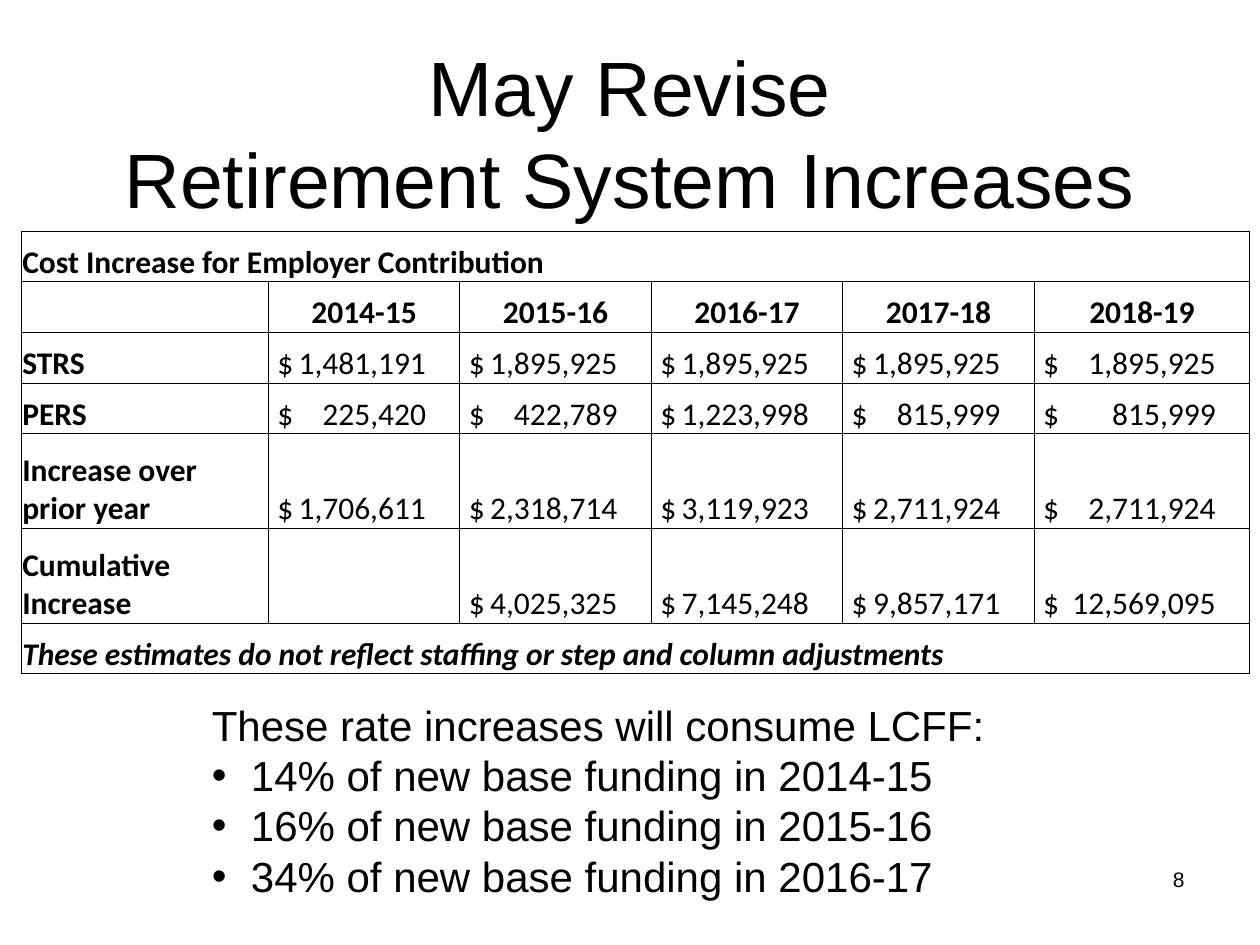
"""Build the slide on retirement system cost increases."""
from dataclasses import dataclass

from lxml.etree import SubElement
from pptx import Presentation
from pptx.dml.color import RGBColor
from pptx.enum.text import MSO_ANCHOR, PP_ALIGN
from pptx.oxml.ns import qn
from pptx.util import Cm, Pt


@dataclass(frozen=True)
class Theme:
    ink: str = "000000"
    body_font: str = "Arial"
    table_font: str = "Calibri"
    title_size: int = 44
    body_size: int = 24
    table_size: int = 18
    number_size: int = 12
    border: float = 0.5


THEME = Theme()

TITLE = ["May Revise", "Retirement System Increases"]
CAPTION = "Cost Increase for Employer Contribution"
YEARS = ["2014-15", "2015-16", "2016-17", "2017-18", "2018-19"]
COSTS = {
    "STRS": ["1,481,191", "1,895,925", "1,895,925", "1,895,925", "1,895,925"],
    "PERS": ["225,420", "422,789", "1,223,998", "815,999", "815,999"],
    "Increase over prior year": ["1,706,611", "2,318,714", "3,119,923", "2,711,924", "2,711,924"],
    "Cumulative Increase": ["", "4,025,325", "7,145,248", "9,857,171", "12,569,095"],
}
FOOTNOTE = "These estimates do not reflect staffing or step and column adjustments"
IMPACT_INTRO = "These rate increases will consume LCFF:"
IMPACTS = [
    "14% of new base funding in 2014-15",
    "16% of new base funding in 2015-16",
    "34% of new base funding in 2016-17",
]
PAGE_NUMBER = "8"

TITLE_BOX = (1.27, 0.43, 22.86, 4.45)
TABLE_CORNER = (0.43, 4.66)
COLUMN_WIDTHS = [4.98, 3.86, 3.86, 3.86, 3.86, 4.34]
ROW_HEIGHTS = [1.02, 1.02, 1.02, 1.02, 1.91, 1.91, 1.02]
IMPACT_BOX = (4.02, 13.97, 17.15, 4.37)
NUMBER_BOX = (18.21, 17.35, 5.92, 1.32)
CELL_INSET = 0.02
AMOUNT_INSET = 0.18
AMOUNT_RIGHT_GAP = 0.86
BULLET_INDENT = 0.79


def add_text(paragraph, text, size, font=THEME.body_font, bold=False, italic=False):
    run = paragraph.add_run()
    run.text = text
    run.font.name = font
    run.font.size = Pt(size)
    run.font.bold = bold
    run.font.italic = italic
    run.font.color.rgb = RGBColor.from_string(THEME.ink)


def add_box(slide, box):
    frame = slide.shapes.add_textbox(*map(Cm, box)).text_frame
    frame.word_wrap = True
    return frame


def add_bullet(paragraph):
    properties = paragraph._p.get_or_add_pPr()
    properties.set("marL", str(Cm(BULLET_INDENT)))
    properties.set("indent", str(-Cm(BULLET_INDENT)))
    SubElement(properties, qn("a:buFont"), typeface=THEME.body_font)
    SubElement(properties, qn("a:buChar"), char="•")


def format_cell(cell):
    properties = cell._tc.get_or_add_tcPr()
    for side in ("a:lnL", "a:lnR", "a:lnT", "a:lnB"):
        line = SubElement(properties, qn(side), w=str(Pt(THEME.border)))
        fill = SubElement(line, qn("a:solidFill"))
        SubElement(fill, qn("a:srgbClr"), val=THEME.ink)
    cell.fill.background()
    cell.vertical_anchor = MSO_ANCHOR.BOTTOM
    cell.margin_left = cell.margin_right = cell.margin_top = Cm(CELL_INSET)
    cell.margin_bottom = 0


def write_cell(cell, text, bold=True, italic=False):
    paragraph = cell.text_frame.paragraphs[0]
    add_text(paragraph, text, THEME.table_size, THEME.table_font, bold, italic)
    return paragraph


def write_amount(cell, amount, width):
    cell.margin_left = Cm(AMOUNT_INSET)
    paragraph = write_cell(cell, f"$\t{amount}", bold=False)
    tabs = SubElement(paragraph._p.get_or_add_pPr(), qn("a:tabLst"))
    SubElement(tabs, qn("a:tab"), pos=str(Cm(width - AMOUNT_RIGHT_GAP)), algn="r")


def add_title(slide):
    title = slide.shapes.title
    title.left, title.top, title.width, title.height = map(Cm, TITLE_BOX)
    title.text_frame.vertical_anchor = MSO_ANCHOR.MIDDLE
    paragraph = title.text_frame.paragraphs[0]
    paragraph.alignment = PP_ALIGN.CENTER
    for index, line in enumerate(TITLE):
        if index:
            paragraph.add_line_break()
        add_text(paragraph, line, THEME.title_size)


def add_cost_table(slide):
    size = (sum(COLUMN_WIDTHS), sum(ROW_HEIGHTS))
    table = slide.shapes.add_table(
        len(ROW_HEIGHTS), len(COLUMN_WIDTHS), *map(Cm, TABLE_CORNER + size)
    ).table
    table.first_row = table.horz_banding = False
    for column, width in zip(table.columns, COLUMN_WIDTHS):
        column.width = Cm(width)
    for row, height in zip(table.rows, ROW_HEIGHTS):
        row.height = Cm(height)
    for cell in table.iter_cells():
        format_cell(cell)

    last_row, last_column = len(ROW_HEIGHTS) - 1, len(COLUMN_WIDTHS) - 1
    for row, text, italic in ((0, CAPTION, False), (last_row, FOOTNOTE, True)):
        table.cell(row, 0).merge(table.cell(row, last_column))
        write_cell(table.cell(row, 0), text, italic=italic)
    for column, year in enumerate(YEARS, 1):
        write_cell(table.cell(1, column), year).alignment = PP_ALIGN.CENTER
    for row, (label, amounts) in enumerate(COSTS.items(), 2):
        write_cell(table.cell(row, 0), label)
        for column, amount in enumerate(amounts, 1):
            if amount:
                write_amount(table.cell(row, column), amount, COLUMN_WIDTHS[column])


def add_impacts(slide):
    frame = add_box(slide, IMPACT_BOX)
    add_text(frame.paragraphs[0], IMPACT_INTRO, THEME.body_size)
    for impact in IMPACTS:
        paragraph = frame.add_paragraph()
        add_bullet(paragraph)
        add_text(paragraph, impact, THEME.body_size)


def add_page_number(slide):
    paragraph = add_box(slide, NUMBER_BOX).paragraphs[0]
    paragraph.alignment = PP_ALIGN.RIGHT
    add_text(paragraph, PAGE_NUMBER, THEME.number_size)


def main():
    deck = Presentation()
    deck.slide_width, deck.slide_height = Cm(25.4), Cm(19.05)
    slide = deck.slides.add_slide(deck.slide_layouts.get_by_name("Title Only"))
    add_title(slide)
    add_page_number(slide)
    add_impacts(slide)
    add_cost_table(slide)
    deck.save("out.pptx")


if __name__ == "__main__":
    main()
